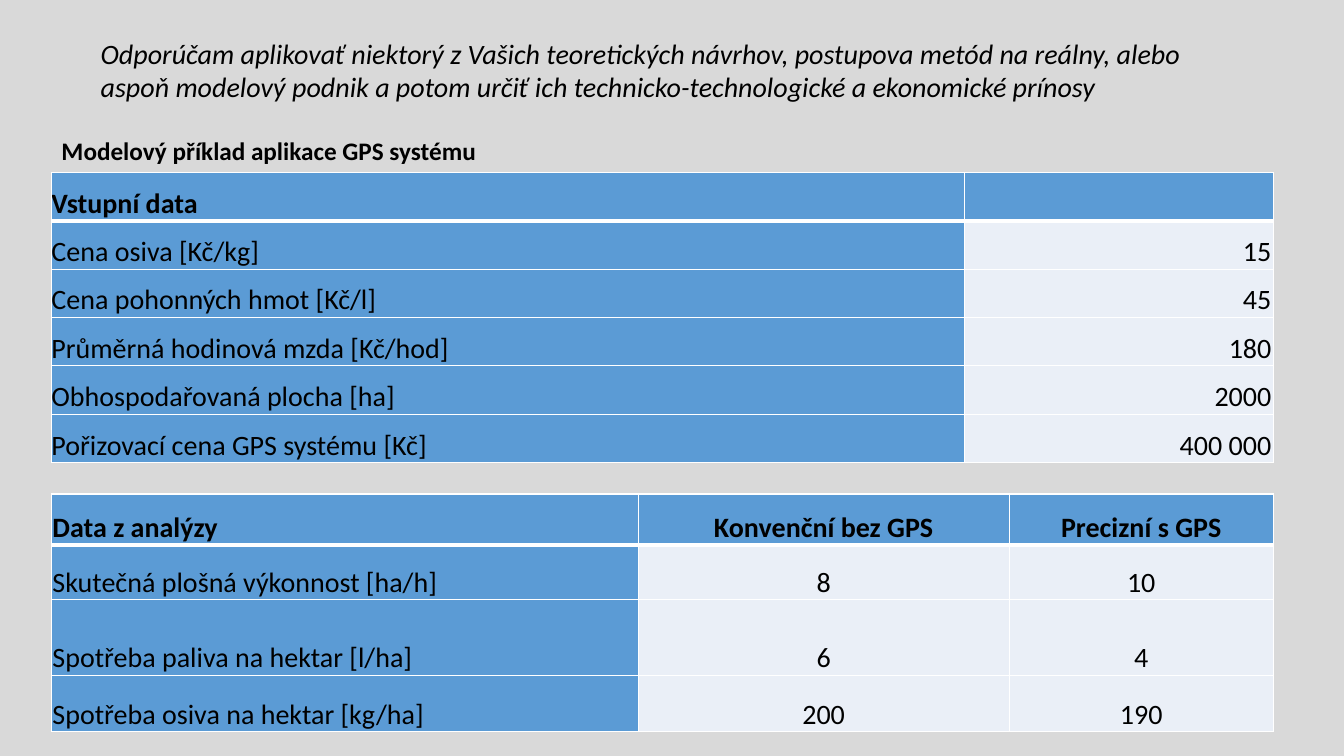
from lxml import etree
from pptx import Presentation
from pptx.dml.color import RGBColor
from pptx.enum.text import MSO_ANCHOR, MSO_AUTO_SIZE, PP_ALIGN
from pptx.oxml.ns import qn
from pptx.util import Inches, Pt

COLORS = {"background": "D9D9D9", "blue": "5B9BD5", "pale": "EAEFF7",
          "border": "FFFFFF", "text": "000000"}
HEADING = "Modelový příklad aplikace GPS systému"
ADVICE = ("Odporúčam aplikovať niektorý z Vašich teoretických návrhov, postupova metód "
          "na reálny, alebo aspoň modelový podnik a potom určiť ich "
          "technicko-technologické a ekonomické prínosy")
INPUT_DATA = {
    "top": 1.71, "columns": [9.06, 3.06], "heights": [0.48] * 6,
    "insets": (0, 0.02, 0.02, 0), "align": PP_ALIGN.RIGHT, "label_spacing": 1.0,
    "rows": [
        ("Vstupní data", ""),
        ("Cena osiva [Kč/kg]", "15"),
        ("Cena pohonných hmot [Kč/l]", "45"),
        ("Průměrná hodinová mzda [Kč/hod]", "180"),
        ("Obhospodařovaná plocha [ha]", "2000"),
        ("Pořizovací cena GPS systému [Kč]", "400 000"),
    ],
}
ANALYSIS_DATA = {
    "top": 4.9, "columns": [5.82, 3.68, 2.62], "heights": [0.51, 0.54, 0.75, 0.56],
    "insets": (0.01, 0.01, 0.01, 0), "align": PP_ALIGN.CENTER, "label_spacing": 1.5,
    "rows": [
        ("Data z analýzy", "Konvenční bez GPS", "Precizní s GPS"),
        ("Skutečná plošná výkonnost [ha/h]", "8", "10"),
        ("Spotřeba paliva na hektar [l/ha]", "6", "4"),
        ("Spotřeba osiva na hektar [kg/ha]", "200", "190"),
    ],
}
LEFT = 0.51


def color(name):
    return RGBColor.from_string(COLORS[name])


def write(paragraph, text, align=PP_ALIGN.LEFT, spacing=1.0, **look):
    paragraph.alignment = align
    paragraph.line_spacing = spacing
    run = paragraph.add_run()
    run.text = text
    for name, value in {"name": "Calibri", "size": Pt(20), **look}.items():
        setattr(run.font, name, value)
    run.font.color.rgb = color("text")


def add_borders(cell, widths):
    properties = cell._tc.get_or_add_tcPr()
    for position, (side, width) in enumerate(widths.items()):
        line = etree.Element(qn(f"a:ln{side}"), w=str(Pt(width)))
        fill = etree.SubElement(line, qn("a:solidFill"))
        etree.SubElement(fill, qn("a:srgbClr"), val=COLORS["border"])
        properties.insert(position, line)


def add_data(slide, data):
    rows, columns, heights = data["rows"], data["columns"], data["heights"]
    table = slide.shapes.add_table(
        len(rows), len(columns), Inches(LEFT), Inches(data["top"]),
        Inches(sum(columns)), Inches(sum(heights))).table
    for column, width in zip(table.columns, columns):
        column.width = Inches(width)
    for row, height in zip(table.rows, heights):
        row.height = Inches(height)
    sides = ("margin_left", "margin_top", "margin_right", "margin_bottom")
    for r, values in enumerate(rows):
        for c, value in enumerate(values):
            cell = table.cell(r, c)
            cell.vertical_anchor = MSO_ANCHOR.BOTTOM
            for side, inset in zip(sides, data["insets"]):
                setattr(cell, side, Inches(inset))
            cell.fill.solid()
            cell.fill.fore_color.rgb = color("pale" if r and c else "blue")
            add_borders(cell, {"L": 1, "R": 1, "T": 3 if r == 1 else 1,
                               "B": 1 if r else 3})
            if value:
                write(cell.text_frame.paragraphs[0], value,
                      data["align"] if c else PP_ALIGN.LEFT,
                      data["label_spacing"] if r and not c else 1.0, bold=r == 0)


def main():
    deck = Presentation()
    deck.slide_width, deck.slide_height = Inches(13.33), Inches(7.5)
    slide = deck.slides.add_slide(deck.slide_layouts[5])
    slide.background.fill.solid()
    slide.background.fill.fore_color.rgb = color("background")

    heading = slide.shapes.title
    heading.left, heading.top = Inches(LEFT), Inches(1.24)
    heading.width, heading.height = Inches(5.59), Inches(0.46)
    heading.text_frame.vertical_anchor = MSO_ANCHOR.BOTTOM
    heading.text_frame.auto_size = MSO_AUTO_SIZE.NONE
    write(heading.text_frame.paragraphs[0], HEADING, spacing=0.9, size=Pt(18), bold=True)

    add_data(slide, INPUT_DATA)
    advice = slide.shapes.add_textbox(
        Inches(0.9), Inches(0.31), Inches(11.12), Inches(0.77)).text_frame
    advice.word_wrap = True
    advice.auto_size = MSO_AUTO_SIZE.SHAPE_TO_FIT_TEXT
    write(advice.paragraphs[0], ADVICE, italic=True)
    add_data(slide, ANALYSIS_DATA)
    deck.save("out.pptx")


if __name__ == "__main__":
    main()
